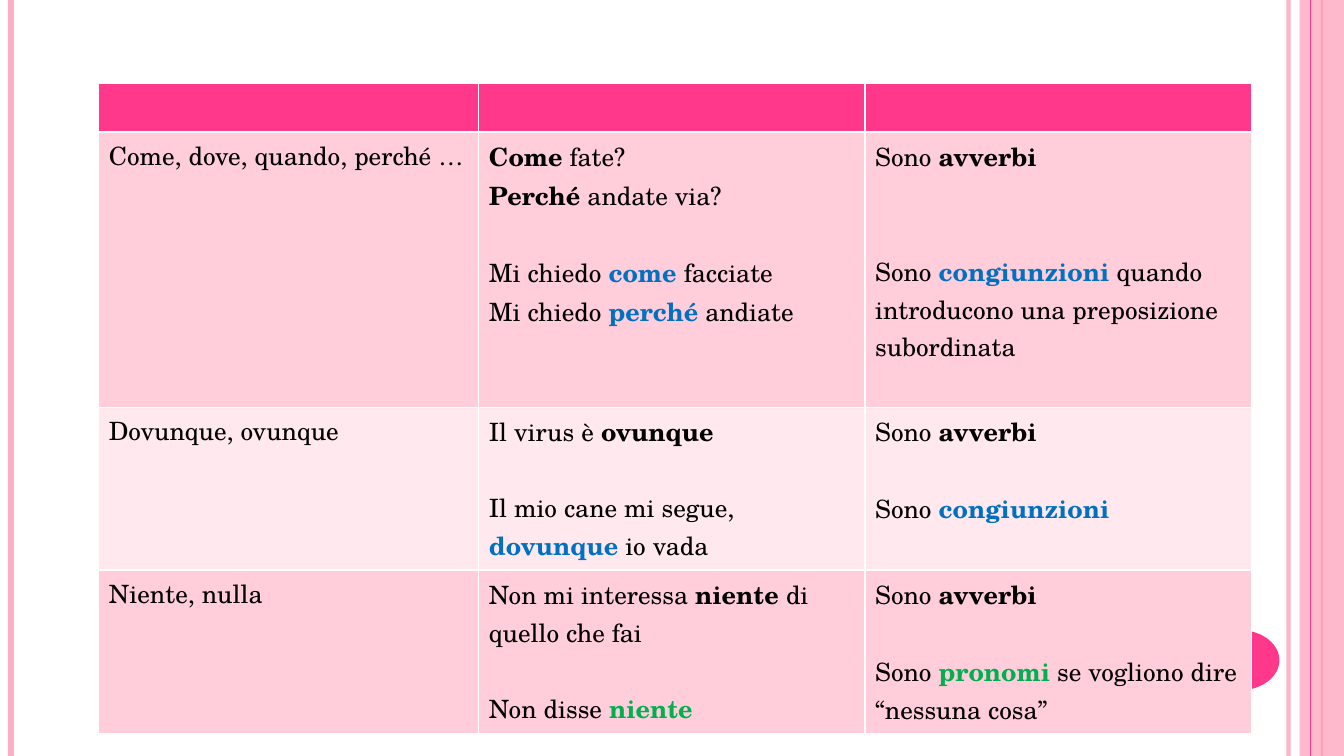
from lxml.etree import SubElement
from pptx import Presentation
from pptx.dml.color import RGBColor
from pptx.enum.shapes import MSO_CONNECTOR, MSO_SHAPE
from pptx.oxml.ns import qn
from pptx.util import Inches, Pt

WIDTH, HEIGHT = Inches(13.33), Inches(7.5)
FONT = "TeX Gyre Schola"
BODY_SIZE = Pt(18)
BLANK_LINE = 27  # points

BLACK = RGBColor(0x00, 0x00, 0x00)
BLUE = RGBColor(0x00, 0x70, 0xC0)
GREEN = RGBColor(0x00, 0xB0, 0x50)
MAGENTA = RGBColor(0xFF, 0x38, 0x8C)
PINK = RGBColor(0xFF, 0xAF, 0xC5)
BAND_DARK = RGBColor(0xFF, 0xCE, 0xDA)
BAND_LIGHT = RGBColor(0xFF, 0xE8, 0xEE)

TABLE_LEFT, TABLE_TOP = 0.98, 0.83
COLUMN_WIDTHS = [3.77, 3.83, 3.83]
ROW_HEIGHTS = [0.48, 2.73, 1.61, 1.62]

# Left, width in points, colour, opacity in percent
RAILS = [
    (12.78, 3, PINK, 93),
    (0.11, 4.5, PINK, 100),
    (13.11, 1.5, MAGENTA, 100),
]
EDGE_LINE = (13, 0.75, MAGENTA, 100)


def plain(text):
    return text, False, BLACK


def strong(text, color=BLACK):
    return text, True, color


def line(*spans, blanks=0):
    """One paragraph, set below a number of blank lines."""
    return blanks, spans


ADVERBS = line(plain("Sono "), strong("avverbi"))

ROWS = [
    [
        [line(plain("Come, dove, quando, perché …"))],
        [
            line(strong("Come"), plain(" fate?")),
            line(strong("Perché "), plain("andate via?")),
            line(plain("Mi chiedo "), strong("come ", BLUE), plain("facciate"), blanks=1),
            line(plain("Mi chiedo "), strong("perché", BLUE), plain(" andiate")),
        ],
        [
            ADVERBS,
            line(plain("Sono "), strong("congiunzioni ", BLUE),
                 plain("quando introducono una preposizione subordinata"), blanks=2),
        ],
    ],
    [
        [line(plain("Dovunque, ovunque"))],
        [
            line(plain("Il virus è "), strong("ovunque")),
            line(plain("Il mio cane mi segue, "), strong("dovunque", BLUE),
                 plain(" io vada"), blanks=1),
        ],
        [ADVERBS, line(plain("Sono "), strong("congiunzioni", BLUE), blanks=1)],
    ],
    [
        [line(plain("Niente, nulla"))],
        [
            line(plain("Non mi interessa "), strong("niente "), plain("di quello che fai")),
            line(plain("Non disse "), strong("niente", GREEN), blanks=1),
        ],
        [
            ADVERBS,
            line(plain("Sono "), strong("pronomi", GREEN),
                 plain(" se vogliono dire “nessuna cosa”"), blanks=1),
        ],
    ],
]


def set_opacity(fill_owner, percent):
    color = next(fill_owner.iter(qn("a:srgbClr")))
    SubElement(color, qn("a:alpha")).set("val", str(percent * 1000))


def add_rail(page, left, width, color, opacity):
    """Full-height vertical line."""
    rail = page.shapes.add_connector(
        MSO_CONNECTOR.STRAIGHT, Inches(left), 0, Inches(left), HEIGHT)
    rail.line.color.rgb = color
    rail.line.width = Pt(width)
    properties = rail._element.spPr
    if opacity < 100:
        set_opacity(properties, opacity)
    SubElement(properties, qn("a:effectLst"))


def add_filled_shape(page, kind, left, top, width, height, color):
    shape = page.shapes.add_shape(
        kind, Inches(left), Inches(top), Inches(width), Inches(height))
    shape.shadow.inherit = False
    shape.fill.solid()
    shape.fill.fore_color.rgb = color
    shape.line.fill.background()
    return shape


def fill_cell(cell, color):
    cell.fill.solid()
    cell.fill.fore_color.rgb = color


def write_cell(cell, lines):
    frame = cell.text_frame
    for index, (blanks, spans) in enumerate(lines):
        para = frame.add_paragraph() if index else frame.paragraphs[0]
        para.space_before = Pt(blanks * BLANK_LINE)
        for text, bold, color in spans:
            span = para.add_run()
            span.text = text
            span.font.name = FONT
            span.font.size = BODY_SIZE
            span.font.bold = bold
            span.font.color.rgb = color


def add_grammar_table(page):
    table = page.shapes.add_table(
        len(ROW_HEIGHTS), len(COLUMN_WIDTHS),
        Inches(TABLE_LEFT), Inches(TABLE_TOP),
        Inches(sum(COLUMN_WIDTHS)), Inches(sum(ROW_HEIGHTS))).table
    for column, width in zip(table.columns, COLUMN_WIDTHS):
        column.width = Inches(width)
    for row, height in zip(table.rows, ROW_HEIGHTS):
        row.height = Inches(height)
    for cell in table.rows[0].cells:
        fill_cell(cell, MAGENTA)
    for number, contents in enumerate(ROWS, start=1):
        band = BAND_DARK if number % 2 else BAND_LIGHT
        for cell, lines in zip(table.rows[number].cells, contents):
            fill_cell(cell, band)
            write_cell(cell, lines)


def main():
    deck = Presentation()
    deck.slide_width, deck.slide_height = WIDTH, HEIGHT
    page = deck.slides.add_slide(deck.slide_layouts[6])
    for rail in RAILS:
        add_rail(page, *rail)
    side_band = add_filled_shape(page, MSO_SHAPE.RECTANGLE, 12.89, 0, 0.44, 7.5, PINK)
    set_opacity(side_band._element.spPr, 87)
    add_rail(page, *EDGE_LINE)
    add_filled_shape(page, MSO_SHAPE.OVAL, 11.89, 6.25, 0.8, 0.6, MAGENTA)
    add_grammar_table(page)
    deck.save("out.pptx")


if __name__ == "__main__":
    main()
